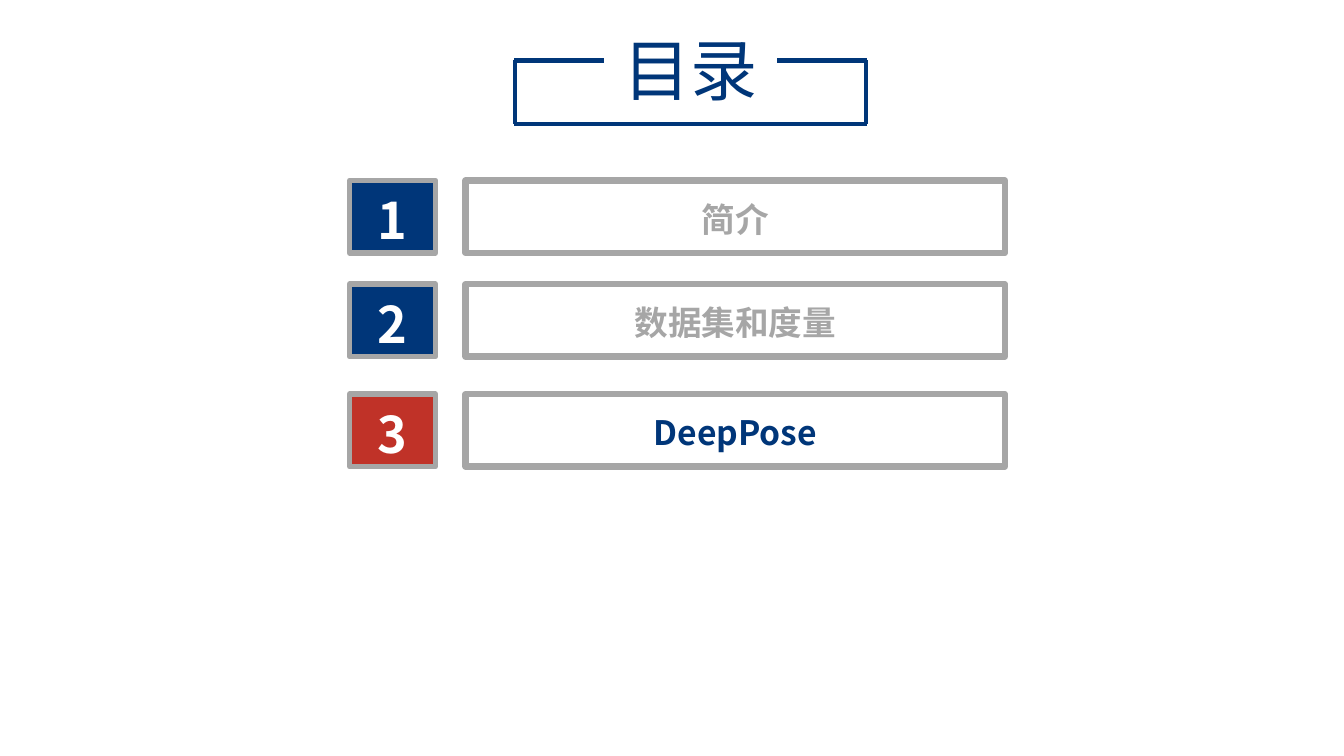
from dataclasses import dataclass

from lxml import etree
from pptx import Presentation
from pptx.dml.color import RGBColor
from pptx.enum import shapes, text
from pptx.oxml import ns
from pptx.util import Pt


@dataclass(frozen=True)
class Theme:
    font: str = "Noto Sans CJK SC"
    navy: RGBColor = RGBColor(0x00, 0x36, 0x79)
    red: RGBColor = RGBColor(0xC0, 0x32, 0x28)
    gray: RGBColor = RGBColor(0xA6, 0xA6, 0xA6)
    white: RGBColor = RGBColor(0xFF, 0xFF, 0xFF)
    title_size: int = 48
    number_size: int = 36
    label_size: int = 24


THEME = Theme()
ROW_HEIGHT = 51.8


def write(shape, wording, size, color, bold=False, spacing=None):
    frame = shape.text_frame
    frame.text = wording
    frame.word_wrap = True
    frame.auto_size = text.MSO_AUTO_SIZE.NONE
    frame.vertical_anchor = text.MSO_ANCHOR.MIDDLE
    frame.margin_top = frame.margin_bottom = 0
    paragraph = frame.paragraphs[0]
    paragraph.alignment = text.PP_ALIGN.CENTER
    paragraph.line_spacing = spacing
    font = paragraph.font
    font.size = Pt(size)
    font.bold = bold
    font.color.rgb = color
    font.name = THEME.font
    defaults = paragraph._p.pPr.find(ns.qn("a:defRPr"))
    etree.SubElement(defaults, ns.qn("a:ea"), typeface=THEME.font)


def add_title(slide, wording):
    title = slide.shapes.title
    title.left, title.top, title.width, title.height = Pt(419.8), Pt(16.5), Pt(146.9), Pt(65.5)
    write(title, wording, THEME.title_size, THEME.navy)


def add_stroke(slide, start, end):
    stroke = slide.shapes.add_connector(
        shapes.MSO_CONNECTOR.STRAIGHT, *map(Pt, start), *map(Pt, end))
    stroke.line.color.rgb = THEME.navy
    stroke.line.width = Pt(3)
    etree.SubElement(stroke._element.spPr, ns.qn("a:effectLst"))


def add_title_bracket(slide):
    left, right, top, bottom = 367.2, 619.2, 43.2, 88.6
    arm, inset = 64.1, 0.7
    add_stroke(slide, (right - arm, top), (right, top))
    add_stroke(slide, (left, top), (left + arm, top))
    add_stroke(slide, (left, bottom), (right, bottom))
    for side in (left + inset, right - inset):
        add_stroke(slide, (side, top), (side, bottom))


def add_box(slide, left, top, width, border, fill=None):
    box = slide.shapes.add_shape(
        shapes.MSO_SHAPE.RECTANGLE, Pt(left), Pt(top), Pt(width), Pt(ROW_HEIGHT))
    box.shadow.inherit = False
    if fill is None:
        box.fill.background()
    else:
        box.fill.solid()
        box.fill.fore_color.rgb = fill
    box.line.color.rgb = THEME.gray
    box.line.width = Pt(border)
    return box


def add_chapter(slide, number, top, label, number_fill, label_color):
    number_box = add_box(slide, 249.8, top, 61.2, 4, number_fill)
    write(number_box, str(number), THEME.number_size, THEME.white, True, 1.1)
    label_box = add_box(slide, 332.6, top, 385.2, 4.5)
    write(label_box, label, THEME.label_size, label_color, True, 1.1)


def main():
    deck = Presentation()
    deck.slide_width, deck.slide_height = Pt(960), Pt(540)
    slide = deck.slides.add_slide(deck.slide_layouts[5])
    add_title(slide, "目录")
    add_title_bracket(slide)
    chapters = [
        (128.9, "简介", THEME.navy, THEME.gray),
        (203, "数据集和度量", THEME.navy, THEME.gray),
        (281.5, "DeepPose", THEME.red, THEME.navy),
    ]
    for number, chapter in enumerate(chapters, start=1):
        add_chapter(slide, number, *chapter)
    deck.save("out.pptx")


if __name__ == "__main__":
    main()
